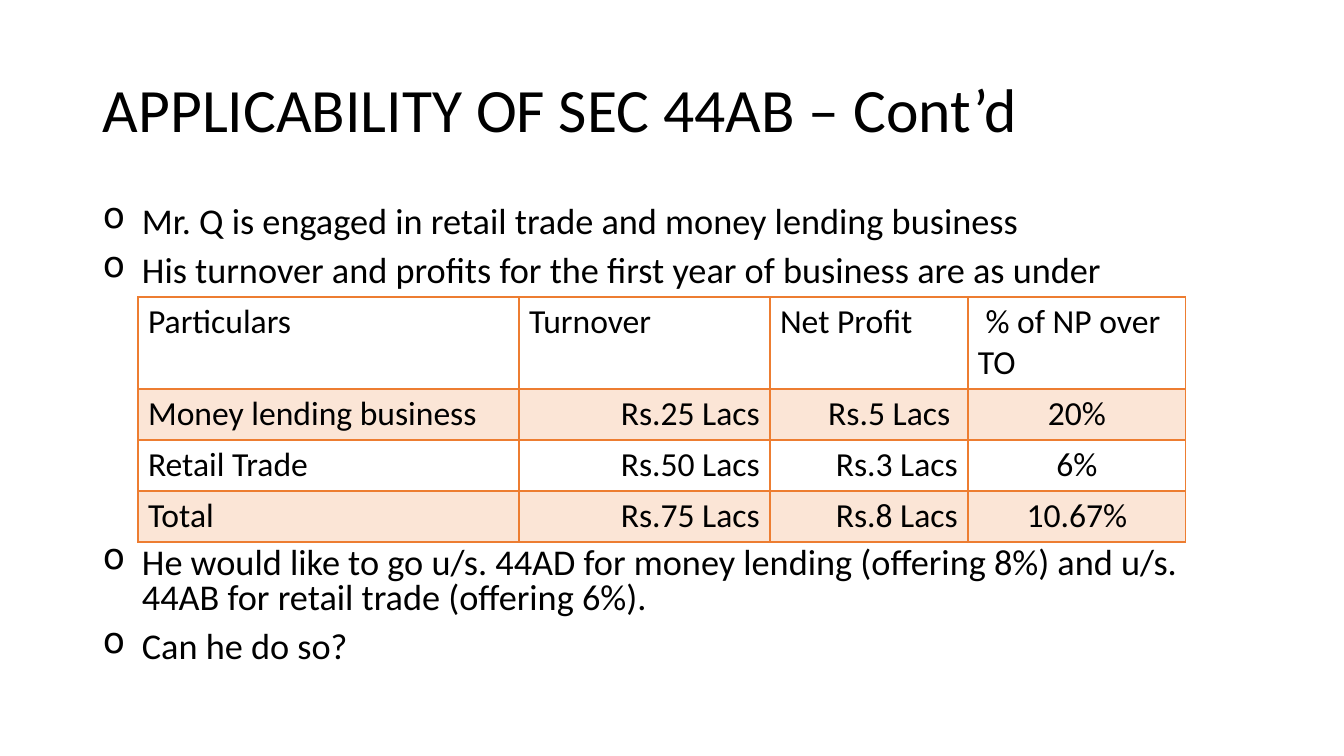
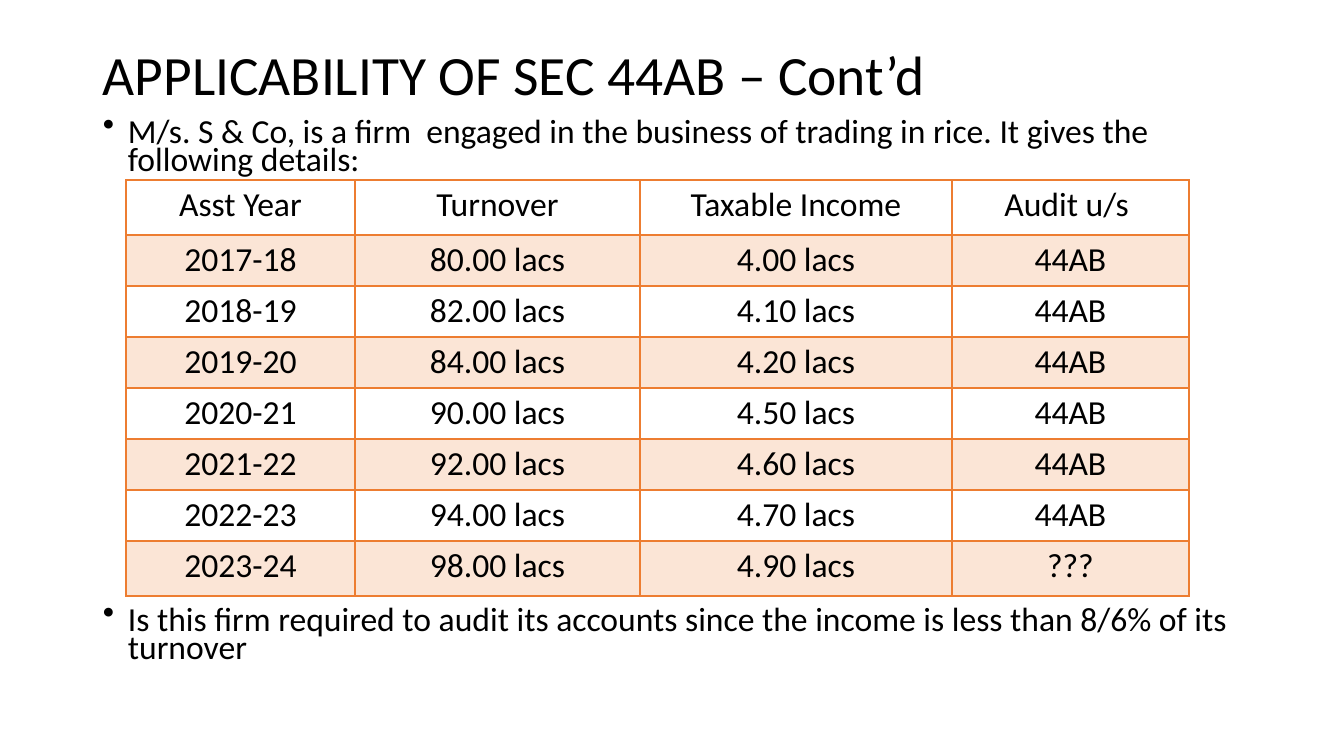
from lxml import etree
from pptx import Presentation
from pptx.dml.color import RGBColor
from pptx.enum.text import MSO_ANCHOR, PP_ALIGN
from pptx.oxml.ns import qn
from pptx.util import Pt

LEFT, CENTER, RIGHT = PP_ALIGN.LEFT, PP_ALIGN.CENTER, PP_ALIGN.RIGHT
MIDDLE, TOP = MSO_ANCHOR.MIDDLE, MSO_ANCHOR.TOP

EMU_PER_PX = 914400 / 100.8
COLORS = {"text": "000000", "border": "ED7D31", "band": "FBE5D6"}
FONT = "Calibri"
TITLE = "APPLICABILITY OF SEC 44AB – Cont’d"
TABLE_SIZE = 24


def px(length):
    return round(length * EMU_PER_PX)


def rgb(name):
    return RGBColor.from_string(COLORS[name])


class Deck:
    """Hold the shared style and the slide being built."""

    def __init__(self):
        self.presentation = Presentation()
        self.presentation.slide_width = px(1344)
        self.presentation.slide_height = px(756)
        self.slide = None

    def style(self, paragraph, size, align=LEFT):
        paragraph.alignment = align
        paragraph.font.name = FONT
        paragraph.font.size = Pt(size)
        paragraph.font.bold = False
        paragraph.font.color.rgb = rgb("text")

    def text_frame(self, top, height, anchor):
        box = self.slide.shapes.add_textbox(px(93), px(top), px(1159), px(height))
        box.text_frame.word_wrap = True
        box.text_frame.vertical_anchor = anchor
        return box.text_frame

    def add_slide(self, title_height, title_size):
        layout = self.presentation.slide_layouts[6]
        self.slide = self.presentation.slides.add_slide(layout)
        title = self.text_frame(40, title_height, MIDDLE).paragraphs[0]
        title.text = TITLE
        title.line_spacing = 0.9
        self.style(title, title_size)

    def bullets(self, top, height, lines, size, spacing, indent, mark):
        frame = self.text_frame(top, height, TOP)
        for index, line in enumerate(lines):
            paragraph = frame.add_paragraph() if index else frame.paragraphs[0]
            paragraph.text = line
            paragraph.line_spacing = spacing
            paragraph.space_before = Pt(10)
            self.style(paragraph, size)
            properties = paragraph._p.get_or_add_pPr()
            properties.set("marL", str(px(indent)))
            properties.set("indent", str(-px(indent)))
            bullet = etree.Element(qn("a:buChar"), char=mark)
            properties.find(qn("a:spcBef")).addnext(bullet)

    def borders(self, cell, widths):
        properties = cell._tc.get_or_add_tcPr()
        for index, (side, width) in enumerate(widths.items()):
            line = etree.Element(qn(f"a:ln{side}"), w=str(Pt(width)))
            fill = etree.SubElement(line, qn("a:solidFill"))
            etree.SubElement(fill, qn("a:srgbClr"), val=COLORS["border"])
            properties.insert(index, line)

    def table(self, left, top, columns, heights, rows, aligns):
        table = self.slide.shapes.add_table(
            len(rows), len(columns), px(left), px(top),
            px(sum(columns)), px(sum(heights))).table
        table.first_row = table.horz_banding = False
        for column, width in zip(table.columns, columns):
            column.width = px(width)
        for r, (row, height) in enumerate(zip(rows, heights)):
            table.rows[r].height = px(height)
            for c, value in enumerate(row):
                cell = table.cell(r, c)
                cell.text = value
                self.style(cell.text_frame.paragraphs[0], TABLE_SIZE,
                           aligns[c] if r else aligns[0])
                if r % 2:
                    cell.fill.solid()
                    cell.fill.fore_color.rgb = rgb("band")
                else:
                    cell.fill.background()
                self.borders(cell, {"L": 1, "R": 1, "T": 2 if r == 1 else 1,
                                    "B": 2 if r == 0 else 1})


def add_two_businesses(deck):
    deck.add_slide(146, 44)
    points = {"size": 25.9, "spacing": 0.8, "indent": 39, "mark": "o"}
    deck.bullets(202, 95, [
        "Mr. Q is engaged in retail trade and money lending business",
        "His turnover and profits for the first year of business are as under",
    ], **points)
    deck.bullets(543, 138, [
        "He would like to go u/s. 44AD for money lending (offering 8%) and u/s. "
        "44AB for retail trade (offering 6%).",
        "Can he do so?",
    ], **points)
    deck.table(138, 297, [381, 251, 198, 218], [92, 51, 51, 51], [
        ("Particulars", "Turnover", "Net Profit", " % of NP over TO"),
        ("Money lending business", "Rs.25 Lacs", "Rs.5 Lacs ", "20%"),
        ("Retail Trade", "Rs.50 Lacs", "Rs.3 Lacs", "6%"),
        ("Total", "Rs.75 Lacs", "Rs.8 Lacs", "10.67%"),
    ], [LEFT, RIGHT, RIGHT, CENTER])


def add_rice_trader(deck):
    deck.add_slide(76, 39.6)
    points = {"size": 24, "spacing": 0.7, "indent": 25, "mark": "•"}
    deck.bullets(116, 64, [
        "M/s. S & Co, is a firm  engaged in the business of trading in rice. "
        "It gives the following details:",
    ], **points)
    deck.bullets(604, 77, [
        "Is this firm required to audit its accounts since the income is less "
        "than 8/6% of its turnover",
    ], **points)
    deck.table(126, 180, [229, 285, 312, 237], [55] + [51] * 6 + [55], [
        ("Asst Year", "Turnover", "Taxable Income", "Audit u/s "),
        ("2017-18", "80.00 lacs", "4.00 lacs", "44AB"),
        ("2018-19", "82.00 lacs", "4.10 lacs", "44AB"),
        ("2019-20", "84.00 lacs", "4.20 lacs", "44AB"),
        ("2020-21", "90.00 lacs", "4.50 lacs", "44AB"),
        ("2021-22", "92.00 lacs", "4.60 lacs", "44AB"),
        ("2022-23", "94.00 lacs", "4.70 lacs", "44AB"),
        ("2023-24", "98.00 lacs", "4.90 lacs", "???"),
    ], [CENTER] * 4)


def main():
    deck = Deck()
    add_two_businesses(deck)
    add_rice_trader(deck)
    deck.presentation.save("out.pptx")


if __name__ == "__main__":
    main()
